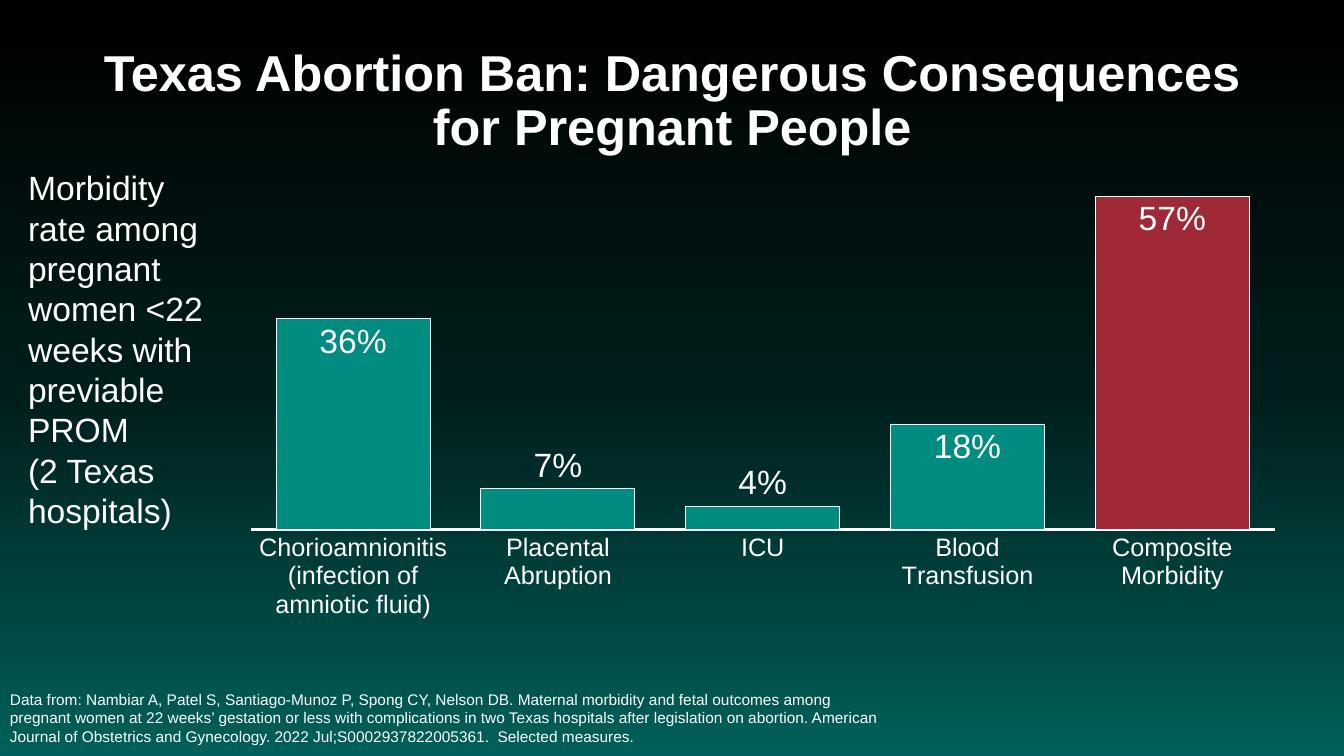
from copy import deepcopy
from dataclasses import dataclass

from lxml.etree import SubElement
from pptx import Presentation
from pptx.chart.data import CategoryChartData
from pptx.dml.color import RGBColor
from pptx.enum.chart import XL_CHART_TYPE, XL_LABEL_POSITION, XL_TICK_MARK
from pptx.enum.text import MSO_ANCHOR, PP_ALIGN
from pptx.oxml.ns import qn
from pptx.util import Inches, Pt


@dataclass(frozen=True)
class Theme:
    """Colours, font and type sizes of the slide."""
    font: str = "Arial"
    white: str = "FFFFFF"
    teal: str = "008C81"
    red: str = "9F2936"
    backdrop: tuple = ((0, "000000"), (0.52, "001E1C"), (1, "006059"))
    title: int = 36
    body: int = 24
    category: int = 18
    source: int = 11


def apply_format(target, **values):
    """Set every given attribute on the target."""
    for name, value in values.items():
        setattr(target, name, value)


class SlideBuilder:
    """Adds styled elements to one slide."""

    def __init__(self, slide, theme):
        self.slide = slide
        self.theme = theme

    def style_font(self, font, size, bold=False):
        """Give a font the theme face and colour."""
        apply_format(font, name=self.theme.font, size=Pt(size), bold=bold)
        font.color.rgb = RGBColor.from_string(self.theme.white)

    def style_line(self, line, width):
        """Draw a line in white."""
        line.color.rgb = RGBColor.from_string(self.theme.white)
        line.width = Pt(width)

    def add_backdrop(self):
        """Fill the background with the vertical gradient."""
        fill = self.slide.background.fill
        fill.gradient()
        fill.gradient_angle = 270
        stop_list = self.slide.background._cSld.find(".//" + qn("a:gsLst"))
        stop_list.append(deepcopy(stop_list[0]))
        for stop, (position, color) in zip(fill.gradient_stops, self.theme.backdrop):
            stop.position = position
            stop.color.rgb = RGBColor.from_string(color)

    def add_text(self, text, box, size, anchor=MSO_ANCHOR.TOP, bold=False, **paragraph_format):
        """Add a wrapped text box with one paragraph."""
        shape = self.slide.shapes.add_textbox(*map(Inches, box))
        frame = shape.text_frame
        apply_format(frame, word_wrap=True, vertical_anchor=anchor, text=text)
        paragraph = frame.paragraphs[0]
        apply_format(paragraph, **paragraph_format)
        for run in paragraph.runs:
            self.style_font(run.font, size, bold)

    def add_columns(self, rates, box, layout, highlight, outside):
        """Add the column chart with labelled bars."""
        theme = self.theme
        data = CategoryChartData(number_format="0%")
        data.categories = list(rates)
        data.add_series("Series 1", list(rates.values()))
        chart = self.slide.shapes.add_chart(
            XL_CHART_TYPE.COLUMN_CLUSTERED, *map(Inches, box), data).chart
        apply_format(chart, has_legend=False, has_title=False)
        self.style_font(chart.font, theme.category)
        apply_format(chart.value_axis, visible=False, has_major_gridlines=False,
                     minimum_scale=0, maximum_scale=0.6)
        axis = chart.category_axis
        apply_format(axis, major_tick_mark=XL_TICK_MARK.NONE, minor_tick_mark=XL_TICK_MARK.NONE)
        self.style_font(axis.tick_labels.font, theme.category)
        self.style_line(axis.format.line, 2)

        plot = chart.plots[0]
        apply_format(plot, gap_width=33, overlap=-27, vary_by_categories=False)
        series = plot.series[0]
        series.format.fill.solid()
        series.format.fill.fore_color.rgb = RGBColor.from_string(theme.teal)
        self.style_line(series.format.line, 0.75)
        bar = series.points[highlight].format
        bar.fill.solid()
        bar.fill.fore_color.rgb = RGBColor.from_string(theme.red)
        self.style_line(bar.line, 0.75)
        labels = series.data_labels
        apply_format(labels, show_value=True, position=XL_LABEL_POSITION.INSIDE_END,
                     number_format="0%", number_format_is_linked=False)
        self.style_font(labels.font, theme.body)
        for index in outside:
            label = series.points[index].data_label
            self.style_font(label.font, theme.body)
            label.position = XL_LABEL_POSITION.OUTSIDE_END
        self.place_plot(chart, layout)

    def place_plot(self, chart, layout):
        """Fix the inner plot area as fractions of the chart."""
        plot_area = chart._chartSpace.chart.plotArea
        for old_layout in plot_area.findall(qn("c:layout")):
            plot_area.remove(old_layout)
        holder = SubElement(plot_area, qn("c:layout"))
        plot_area.insert(0, holder)
        manual = SubElement(holder, qn("c:manualLayout"))
        settings = {"layoutTarget": "inner", "xMode": "edge", "yMode": "edge",
                    **dict(zip("xywh", layout))}
        for name, value in settings.items():
            SubElement(manual, qn(f"c:{name}")).set("val", str(value))


def main():
    """Build and save the slide."""
    presentation = Presentation()
    apply_format(presentation, slide_width=Inches(13.33), slide_height=Inches(7.5))
    theme = Theme()
    builder = SlideBuilder(presentation.slides.add_slide(presentation.slide_layouts[6]), theme)
    builder.add_backdrop()
    builder.add_text(
        "Texas Abortion Ban: Dangerous Consequences for Pregnant People",
        (0.92, 0.4, 11.5, 1.23), theme.title, MSO_ANCHOR.MIDDLE, True,
        alignment=PP_ALIGN.CENTER, line_spacing=0.9)
    builder.add_text(
        "Data from: Nambiar A, Patel S, Santiago-Munoz P, Spong CY, Nelson DB. "
        "Maternal morbidity and fetal outcomes among pregnant women at 22 weeks’ gestation "
        "or less with complications in two Texas hospitals after legislation on abortion. "
        "American Journal of Obstetrics and Gynecology. 2022 Jul;S0002937822005361.  "
        "Selected measures.",
        (0, 6.66, 9, 0.92), theme.source, MSO_ANCHOR.MIDDLE)
    rates = {
        "Chorioamnionitis (infection of amniotic fluid)": 0.36,
        "Placental\nAbruption": 0.07,
        "ICU": 0.04,
        "Blood\nTransfusion": 0.18,
        "Composite\nMorbidity": 0.57,
    }
    builder.add_columns(rates, (2.33, 1.55, 10.46, 4.73), (0.015, 0.047, 0.971, 0.736),
                        highlight=4, outside=(1, 2))
    builder.add_text(
        "Morbidity rate among pregnant women <22 weeks with previable PROM \v(2 Texas hospitals)",
        (0.18, 1.61, 2.15, 3.74), theme.body, space_after=Pt(12))
    presentation.save("out.pptx")


if __name__ == "__main__":
    main()
